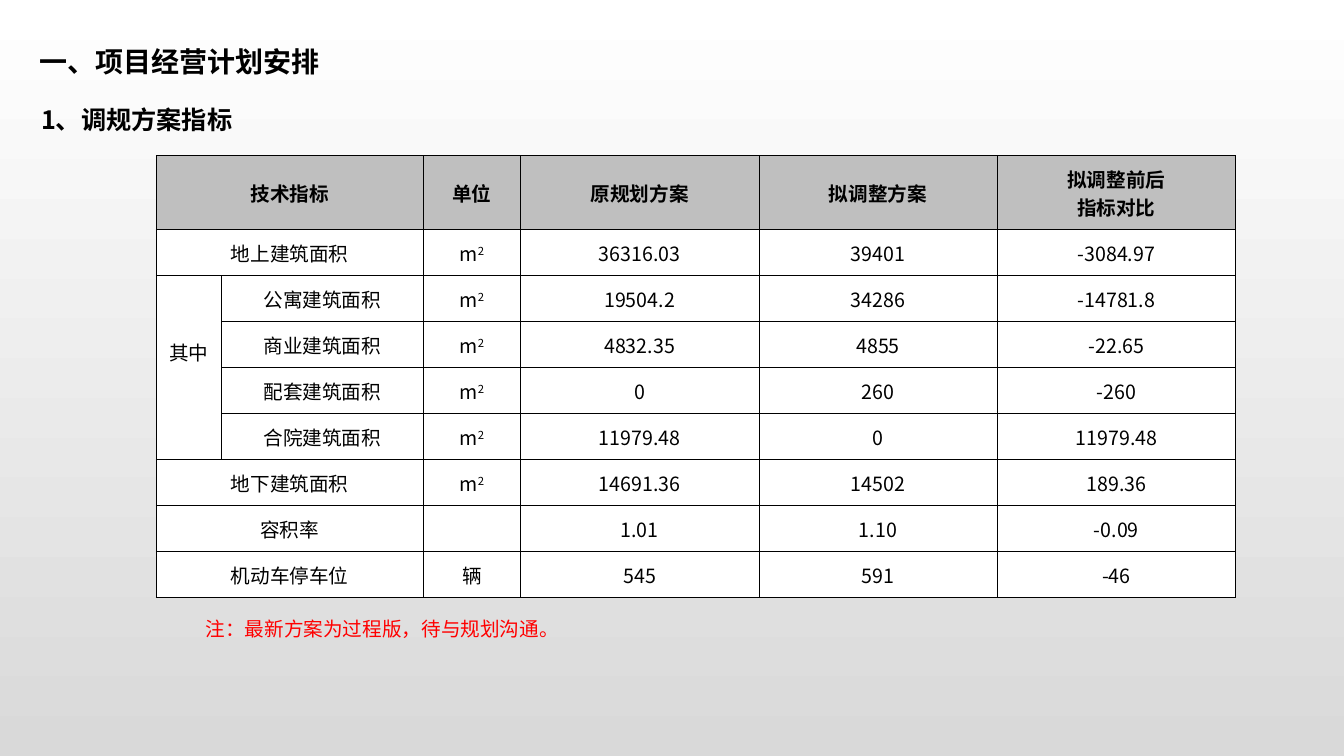
from lxml.etree import SubElement as Sub
from pptx import Presentation
from pptx.dml.color import RGBColor as RGB
from pptx.enum.text import MSO_ANCHOR as Anchor, MSO_AUTO_SIZE as Auto, PP_ALIGN as Align
from pptx.oxml.ns import qn
from pptx.util import Pt

FONT = "Noto Sans CJK SC"
INK = {"black": "000000", "white": "FFFFFF", "head": "BFBFBF",
       "fade": "D9D9D9", "red": "FF0000"}
COLS = [46.6, 144.2, 69.4, 170.3, 170.3, 170.3]
HEAD_H, ROW_H = 53, 32.8
ROWS = [
    ["技术指标", "", "单位", "原规划方案", "拟调整方案", "拟调整前后\n指标对比"],
    ["地上建筑面积", "", "m2", "36316.03", "39401", "-3084.97"],
    ["其中", "公寓建筑面积", "m2", "19504.2", "34286", "-14781.8"],
    ["", "商业建筑面积", "m2", "4832.35", "4855", "-22.65"],
    ["", "配套建筑面积", "m2", "0", "260", "-260"],
    ["", "合院建筑面积", "m2", "11979.48", "0", "11979.48"],
    ["地下建筑面积", "", "m2", "14691.36", "14502", "189.36"],
    ["容积率", "", "", "1.01", "1.10", "-0.09"],
    ["机动车停车位", "", "辆", "545", "591", "-46"],
]
GROUP = range(2, 6)


def style(run, size, ink="black", bold=False):
    font = run.font
    font.name, font.size, font.bold = FONT, Pt(size), bold
    font.color.rgb = RGB.from_string(INK[ink])
    Sub(font._element, qn("a:ea"), typeface=FONT)


def write(shape, box, text, size, ink="black", bold=False):
    shape.left, shape.top, shape.width, shape.height = map(Pt, box)
    frame = shape.text_frame
    frame.text = text
    frame.word_wrap = True
    frame.auto_size = Auto.NONE
    frame.vertical_anchor = Anchor.TOP
    para = frame.paragraphs[0]
    para.alignment = Align.LEFT
    style(para.runs[0], size, ink, bold)


def label(slide, box, *args):
    write(slide.shapes.add_textbox(0, 0, 0, 0), box, *args)


def shade(slide):
    fill = slide.background.fill
    fill.gradient()
    fill.gradient_angle = 270
    for stop, ink in zip(fill.gradient_stops, ["white", "fade"]):
        stop.color.rgb = RGB.from_string(INK[ink])


def border(cell):
    props = cell._tc.get_or_add_tcPr()
    for side in ["lnL", "lnR", "lnT", "lnB"]:
        line = Sub(props, qn(f"a:{side}"), w=str(Pt(0.5)))
        fill = Sub(line, qn("a:solidFill"))
        Sub(fill, qn("a:srgbClr"), val=INK["black"])


def fill_cell(cell, text, head):
    border(cell)
    cell.fill.solid()
    cell.fill.fore_color.rgb = RGB.from_string(INK["head" if head else "white"])
    cell.margin_left = cell.margin_right = cell.margin_top = Pt(0.7)
    cell.margin_bottom = 0
    cell.vertical_anchor = Anchor.MIDDLE
    frame = cell.text_frame
    frame.text = text
    if text == "m2":
        para = frame.paragraphs[0]
        para.text = "m"
        power = para.add_run()
        power.text = "2"
        power.font._element.set("baseline", "30000")
    for para in frame.paragraphs:
        para.alignment = Align.CENTER
        for run in para.runs:
            style(run, 14, bold=head)


def add_grid(slide, left, top):
    high = HEAD_H + ROW_H * (len(ROWS) - 1)
    grid = slide.shapes.add_table(len(ROWS), len(COLS), Pt(left), Pt(top),
                                  Pt(sum(COLS)), Pt(high)).table
    grid.horz_banding = False
    for col, wide in zip(grid.columns, COLS):
        col.width = Pt(wide)
    for r, texts in enumerate(ROWS):
        grid.rows[r].height = Pt(ROW_H if r else HEAD_H)
        for c, text in enumerate(texts):
            fill_cell(grid.cell(r, c), text, r == 0)
        if r not in GROUP:
            grid.cell(r, 0).merge(grid.cell(r, 1))
    group = grid.cell(GROUP[0], 0)
    group.merge(grid.cell(GROUP[-1], 0))
    group.margin_bottom = Pt(23)


def main():
    deck = Presentation()
    deck.slide_width, deck.slide_height = Pt(960), Pt(540)
    slide = deck.slides.add_slide(deck.slide_layouts[5])
    shade(slide)
    write(slide.shapes.title, (21, 28, 402, 40), "一、项目经营计划安排", 20, "black", True)
    label(slide, (22.3, 71, 678, 29), "1、调规方案指标", 18, "black", True)
    add_grid(slide, 111.6, 111)
    label(slide, (139.7, 437, 317.5, 24.5), "注：最新方案为过程版，待与规划沟通。", 14, "red")
    deck.save("out.pptx")


if __name__ == "__main__":
    main()
